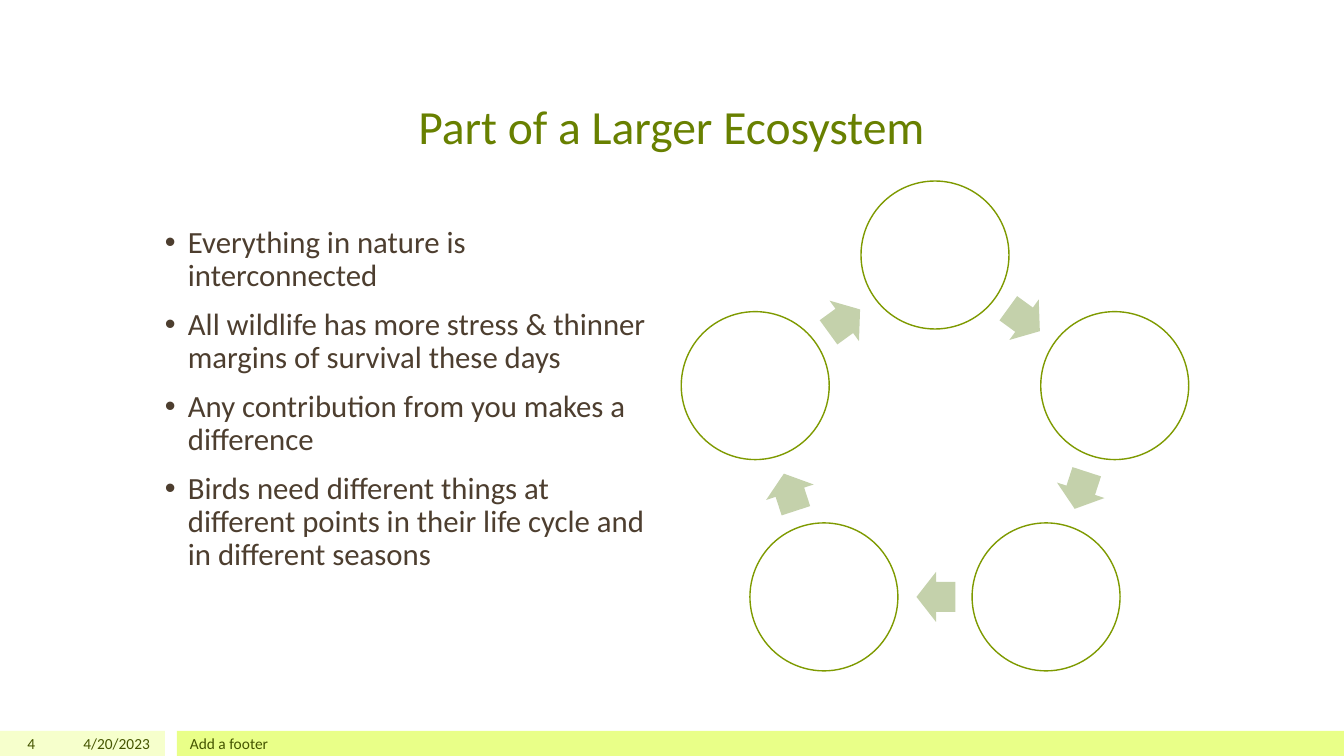
import math
from lxml import etree
from pptx import Presentation
from pptx import util as u
from pptx.dml.color import RGBColor
from pptx.enum import shapes, text
from pptx.oxml import ns

TITLE = "Part of a Larger Ecosystem"
POINTS = [
    "Everything in nature is interconnected",
    "All wildlife has more stress & thinner margins of survival these days",
    "Any contribution from you makes a difference",
    "Birds need different things at different points in their life cycle and in different seasons",
]
LEFT, CENTER, RIGHT = text.PP_ALIGN.LEFT, text.PP_ALIGN.CENTER, text.PP_ALIGN.RIGHT
# text, left, width, alignment
FOOTER = [("4", 0, 45, RIGHT), ("4/20/2023", 50, 110, RIGHT), ("Add a footer", 180, 1008, LEFT)]
# left, width, theme colour
BANDS = [(0, 165, "band_light"), (177, 1167, "band_bright")]

THEME = {
    "font": "Calibri",
    "title": {"size": 34, "color": "688000"},
    "body": {"size": 22, "color": "4D3E2F"},
    "footer": {"size": 11, "color": "455500"},
    "band_light": "F6FFCC", "band_bright": "E9FF88",
    "circle": "FFFFFF", "circle_line": "7E9A00", "arrow": "C4D1AB",
}

WIDTH, HEIGHT = 1344, 756
FOOTER_TOP, FOOTER_HEIGHT = 731, 25
STEPS, RING_X, RING_Y, RING_RADIUS = 5, 935, 444, 189
CIRCLE, ARROW_WIDTH, ARROW_HEIGHT, ARROW_LAG = 148, 39, 50, 1
INDENT = 23


def px(length):
    return u.Emu(round(length * 914400 / 100.8))


def add_shape(slide, kind, box, fill, line=None):
    shape = slide.shapes.add_shape(kind, *map(px, box))
    shape.shadow.inherit = False
    shape.fill.solid()
    shape.fill.fore_color.rgb = RGBColor.from_string(fill)
    if line:
        shape.line.color.rgb = RGBColor.from_string(line)
        shape.line.width = u.Pt(1)
    else:
        shape.line.fill.background()
    return shape


def add_text(slide, lines, box, style, anchor, **para_format):
    frame = slide.shapes.add_textbox(*map(px, box)).text_frame
    frame.word_wrap = True
    frame.vertical_anchor = anchor
    for index, line in enumerate(lines):
        para = frame.paragraphs[0] if index == 0 else frame.add_paragraph()
        for name, value in para_format.items():
            setattr(para, name, value)
        span = para.add_run()
        span.text = line
        span.font.name = THEME["font"]
        span.font.size = u.Pt(THEME[style]["size"])
        span.font.color.rgb = RGBColor.from_string(THEME[style]["color"])
    return frame


def add_bullet(para):
    props = para._p.get_or_add_pPr()
    props.set("marL", str(px(INDENT)))
    props.set("indent", str(-px(INDENT)))
    etree.SubElement(props, ns.qn("a:buFont")).set("typeface", "Arial")
    etree.SubElement(props, ns.qn("a:buChar")).set("char", "•")


def ring_point(step, radius):
    angle = math.tau * step / STEPS
    return RING_X + radius * math.sin(angle), RING_Y - radius * math.cos(angle)


def centered(x, y, width, height):
    return x - width / 2, y - height / 2, width, height


def add_cycle(slide):
    """Circles on a ring, each followed by an arrow to the next one."""
    chord_distance = RING_RADIUS * math.cos(math.pi / STEPS)
    for step in range(STEPS):
        add_shape(slide, shapes.MSO_SHAPE.OVAL,
                  centered(*ring_point(step, RING_RADIUS), CIRCLE, CIRCLE),
                  THEME["circle"], THEME["circle_line"])
        turn = 360 * (step + 0.5) / STEPS
        x, y = ring_point(step + 0.5, chord_distance)
        x -= ARROW_LAG * math.cos(math.radians(turn))
        y -= ARROW_LAG * math.sin(math.radians(turn))
        arrow = add_shape(slide, shapes.MSO_SHAPE.RIGHT_ARROW,
                          centered(x, y, ARROW_WIDTH, ARROW_HEIGHT), THEME["arrow"])
        arrow.adjustments[0] = 0.6
        arrow.rotation = turn


def main():
    deck = Presentation()
    deck.slide_width, deck.slide_height = px(WIDTH), px(HEIGHT)
    slide = deck.slides.add_slide(deck.slide_layouts[6])

    for left, width, color in BANDS:
        add_shape(slide, shapes.MSO_SHAPE.RECTANGLE,
                  (left, FOOTER_TOP, width, FOOTER_HEIGHT), THEME[color])
    add_text(slide, [TITLE], (155, 30, 1033, 130), "title",
             text.MSO_ANCHOR.BOTTOM, alignment=CENTER, line_spacing=0.9)
    body = add_text(slide, POINTS, (155, 222, 508, 458), "body",
                    text.MSO_ANCHOR.TOP, line_spacing=0.9, space_after=u.Pt(11))
    for para in body.paragraphs:
        add_bullet(para)
    for label, left, width, alignment in FOOTER:
        add_text(slide, [label], (left, FOOTER_TOP, width, FOOTER_HEIGHT), "footer",
                 text.MSO_ANCHOR.MIDDLE, alignment=alignment)
    add_cycle(slide)
    deck.save("out.pptx")


if __name__ == "__main__":
    main()
